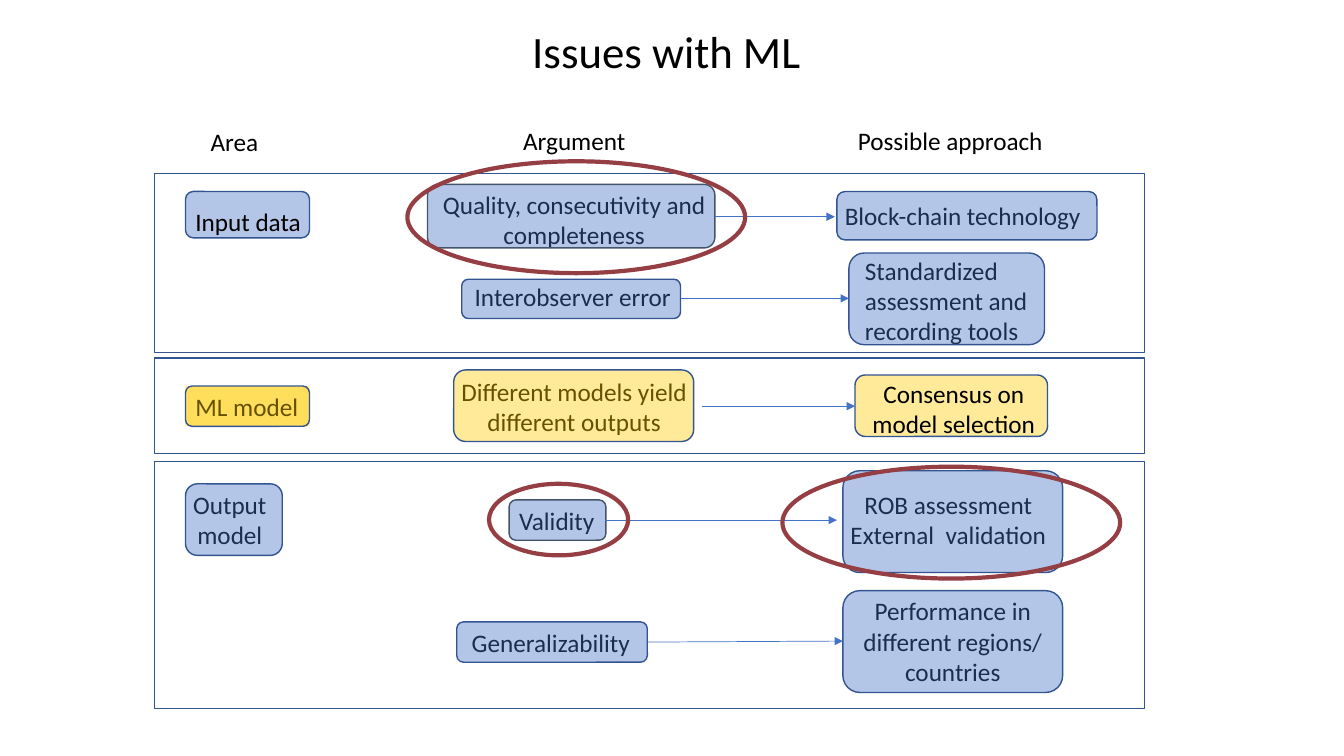
from lxml import etree
from pptx import Presentation
from pptx.dml.color import RGBColor
from pptx.enum.shapes import MSO_CONNECTOR, MSO_SHAPE
from pptx.enum.text import MSO_ANCHOR, MSO_AUTO_SIZE, PP_ALIGN
from pptx.oxml.ns import qn
from pptx.util import Pt

PX = 9144
RECT, ROUNDED, OVAL = MSO_SHAPE.RECTANGLE, MSO_SHAPE.ROUNDED_RECTANGLE, MSO_SHAPE.OVAL
STRAIGHT = MSO_CONNECTOR.STRAIGHT
LEFT, CENTER = PP_ALIGN.LEFT, PP_ALIGN.CENTER
TOP, MIDDLE = MSO_ANCHOR.TOP, MSO_ANCHOR.MIDDLE
FIT, FIXED = MSO_AUTO_SIZE.SHAPE_TO_FIT_TEXT, MSO_AUTO_SIZE.NONE

BLUE, YELLOW, RED = "4472C4", "FFCC00", "953E43"
OUTLINE, SLATE, BLACK = "325491", "44546A", "000000"
OPACITY = "40000"


def rgb(value):
    """Turn a hex string into a colour."""
    return RGBColor.from_string(value)


def emu(lengths):
    """Turn lengths in px into EMU."""
    return [length * PX for length in lengths]


def shift(region, box):
    """Place a box relative to the corner of its region."""
    return (region[0] + box[0], region[1] + box[1], *box[2:])


def tint(shape, fill):
    """Give a shape a translucent fill."""
    shape.fill.solid()
    shape.fill.fore_color.rgb = rgb(fill)
    colour = shape.fill._xPr.find(".//" + qn("a:srgbClr"))
    etree.SubElement(colour, qn("a:alpha"), val=OPACITY)


def add_text(page, box, text, size=18, align=LEFT, anchor=TOP, wrap=False,
             resize=FIT, spacing=None, fill=None):
    """Add a text box with one paragraph per line of text."""
    shape = page.shapes.add_textbox(*emu(box))
    if fill:
        tint(shape, fill)
    frame = shape.text_frame
    frame.word_wrap = wrap
    frame.auto_size = resize
    frame.vertical_anchor = anchor
    for index, line in enumerate(text.split("\n")):
        para = frame.paragraphs[0] if index == 0 else frame.add_paragraph()
        para.alignment = align
        if spacing:
            para.line_spacing = spacing
        span = para.add_run()
        span.text = line
        span.font.size = Pt(size)
        span.font.name = "Calibri"
        span.font.color.rgb = rgb(BLACK)


def add_outline(page, kind, box, line=OUTLINE, width=1, fill=None):
    """Add an outlined shape, hollow unless a fill is given."""
    shape = page.shapes.add_shape(kind, *emu(box))
    shape.shadow.inherit = False
    if fill:
        tint(shape, fill)
    else:
        shape.fill.background()
    shape.line.color.rgb = rgb(line)
    shape.line.width = Pt(width)


def add_arrow(page, region, ends):
    """Add a thin arrow whose ends are relative to the region."""
    start, finish = shift(region, ends[:2]), shift(region, ends[2:])
    arrow = page.shapes.add_connector(STRAIGHT, *emu(start + finish))
    arrow.line.color.rgb = rgb(BLUE)
    arrow.line.width = Pt(0.5)
    etree.SubElement(arrow.line._get_or_add_ln(), qn("a:tailEnd"), type="triangle")
    etree.SubElement(arrow._element.spPr, qn("a:effectLst"))


def add_card(page, region, frame, label, text, fill=BLUE, line=OUTLINE,
             on_top=False, label_fill=None, **style):
    """Add a tinted card with its label beneath or on top of the tint."""
    if on_top:
        add_outline(page, ROUNDED, shift(region, frame), line, fill=fill)
    add_text(page, shift(region, label), text, fill=label_fill, **style)
    if not on_top:
        add_outline(page, ROUNDED, shift(region, frame), line, fill=fill)


def add_section(page, region, arrows, rings=()):
    """Add the border, arrows and highlight rings of a section."""
    add_outline(page, RECT, region)
    for ends in arrows:
        add_arrow(page, region, ends)
    for ring in rings:
        add_outline(page, OVAL, shift(region, ring), RED, 3)


def add_headings(page, region):
    """Add the slide title and the three column headings."""
    add_text(page, shift(region, (86, 12, 1150, 83)), "Issues with ML", size=32,
             align=CENTER, anchor=MIDDLE, wrap=True, resize=FIXED, spacing=0.9)
    for box, heading in (((199, 120, 74, 40), "Area"),
                         ((509, 119, 128, 40), "Argument"),
                         ((841, 119, 205, 40), "Possible approach")):
        add_text(page, shift(region, box), heading)


def add_input_section(page, region):
    """Add the issues with the input data."""
    add_card(page, region, (31, 18, 123, 46), (31, 28, 126, 40), "Input data", on_top=True)
    add_card(page, region, (271, 11, 285, 63), (274, 11, 285, 71),
             "Quality, consecutivity and completeness", line=SLATE, align=CENTER, wrap=True)
    add_card(page, region, (677, 18, 258, 48), (675, 22, 258, 40), "Block-chain technology")
    add_card(page, region, (305, 105, 217, 39), (308, 102, 217, 40), "Interobserver error")
    add_card(page, region, (689, 79, 194, 91), (695, 76, 184, 101),
             "Standardized assessment and recording tools", wrap=True)
    add_section(page, region, [(556, 43, 675, 43), (522, 124, 689, 124)],
                [(251, -12, 335, 111)])


def add_model_section(page, region):
    """Add the issues with the choice of model."""
    add_card(page, region, (695, 17, 191, 61), (701, 15, 184, 71),
             "Consensus on model selection", YELLOW, on_top=True, align=CENTER, wrap=True)
    add_card(page, region, (31, 28, 123, 40), (31, 28, 123, 40), "ML model", YELLOW,
             label_fill=YELLOW)
    add_card(page, region, (297, 12, 238, 71), (290, 13, 253, 71),
             "Different models yield different outputs", YELLOW, align=CENTER, wrap=True)
    add_section(page, region, [(543, 48, 695, 48)])


def add_output_section(page, region):
    """Add the issues with the output model."""
    add_card(page, region, (31, 22, 96, 71), (12, 22, 126, 71), "Output model",
             align=CENTER, wrap=True)
    add_card(page, region, (352, 38, 96, 40), (352, 38, 96, 40), "Validity", line=SLATE)
    add_card(page, region, (683, 9, 218, 101), (677, 22, 221, 71),
             "ROB assessment\nExternal  validation", align=CENTER, wrap=True)
    add_card(page, region, (300, 159, 189, 40), (305, 159, 179, 40), "Generalizability")
    add_card(page, region, (683, 128, 218, 101), (689, 128, 206, 101),
             "Performance in different regions/ countries", align=CENTER, wrap=True)
    add_section(page, region, [(447, 58, 677, 58), (488, 179, 683, 178)],
                [(332, 22, 138, 71), (623, 5, 335, 111)])


def main():
    """Build the slide and save it."""
    deck = Presentation()
    deck.slide_width, deck.slide_height = emu((1333, 750))
    page = deck.slides.add_slide(deck.slide_layouts[6])
    add_headings(page, (0, 0, 1333, 172))
    add_input_section(page, (153, 172, 982, 178))
    add_model_section(page, (153, 355, 982, 95))
    add_output_section(page, (153, 458, 982, 245))
    deck.save("out.pptx")


if __name__ == "__main__":
    main()
